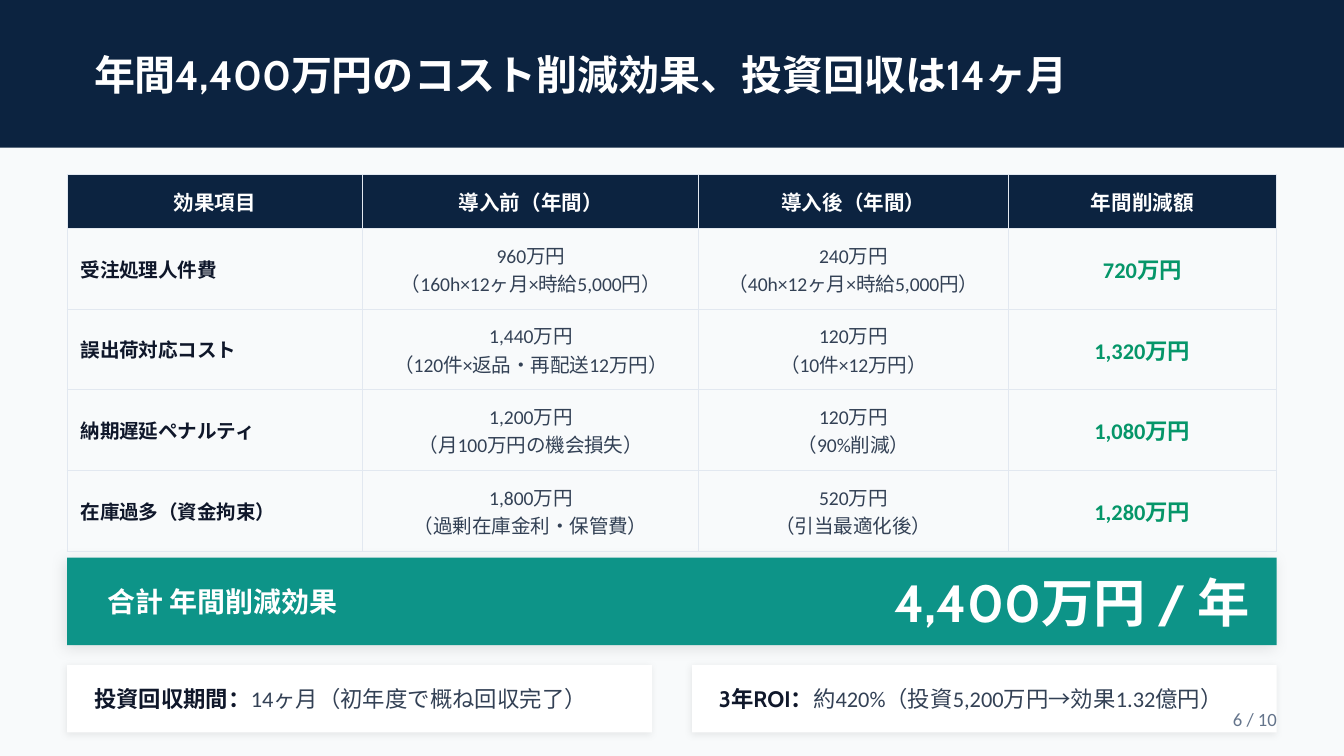
from lxml.etree import SubElement
from pptx import Presentation
from pptx.dml.color import RGBColor
from pptx.enum.shapes import MSO_SHAPE
from pptx.enum.text import MSO_ANCHOR, PP_ALIGN
from pptx.oxml import parse_xml
from pptx.oxml.ns import nsdecls, qn
from pptx.util import Inches, Pt

NAVY = RGBColor(0x0C, 0x23, 0x40)
TEAL = RGBColor(0x0D, 0x94, 0x88)
GREEN = RGBColor(0x05, 0x96, 0x69)
INK = RGBColor(0x0F, 0x17, 0x2A)
SLATE = RGBColor(0x33, 0x41, 0x55)
GRAY = RGBColor(0x64, 0x74, 0x8B)
BORDER = RGBColor(0xE2, 0xE8, 0xF0)
PAPER = RGBColor(0xF8, 0xFA, 0xFB)
WHITE = RGBColor(0xFF, 0xFF, 0xFF)

HEADING, BODY = "Cabin", "Calibri"
LEFT, CENTER, RIGHT = PP_ALIGN.LEFT, PP_ALIGN.CENTER, PP_ALIGN.RIGHT

# The 16:9 slide is a grid of 200 columns; rows are as tall as columns are wide.
COLUMNS = 200
presentation = Presentation()
presentation.slide_width = Inches(10)
presentation.slide_height = presentation.slide_width * 9 // 16
UNIT = presentation.slide_width // COLUMNS
MARGIN = 10
CONTENT = COLUMNS - 2 * MARGIN

slide = presentation.slides.add_slide(presentation.slide_layouts[6])
slide.background.fill.solid()
slide.background.fill.fore_color.rgb = PAPER


def add_panel(box, color, shadow=None):
    """Draw a filled rectangle; shadow is (opacity %, blur pt, distance pt)."""
    panel = slide.shapes.add_shape(MSO_SHAPE.RECTANGLE, *[n * UNIT for n in box])
    panel.shadow.inherit = False
    panel.fill.solid()
    panel.fill.fore_color.rgb = color
    panel.line.fill.background()
    if shadow:
        opacity, blur, distance = shadow
        effects = panel._element.spPr.find(qn("a:effectLst"))
        effects.append(parse_xml(
            f'<a:outerShdw {nsdecls("a")} blurRad="{Pt(blur)}" dist="{Pt(distance)}"'
            f' dir="{135 * 60000}" algn="bl" rotWithShape="0"><a:srgbClr val="000000">'
            f'<a:alpha val="{opacity * 1000}"/></a:srgbClr></a:outerShdw>'))


def write(text_frame, lines, align=LEFT):
    """Fill a frame with lines, each a list of (text, format) runs."""
    for index, line in enumerate(lines):
        paragraph = text_frame.paragraphs[0] if index == 0 else text_frame.add_paragraph()
        paragraph.alignment = align
        for text, style in line:
            run = paragraph.add_run()
            run.text = text
            for name, value in style.items():
                if name == "color":
                    run.font.color.rgb = value
                else:
                    setattr(run.font, name, value)


# Coloured areas
CARD_WIDTH, CARD_STEP = 87, 93
add_panel((0, 0, COLUMNS, 22), NAVY)
add_panel((MARGIN, 83, CONTENT, 13), TEAL, (10, 8, 2))
for card in range(2):
    add_panel((MARGIN + card * CARD_STEP, 99, CARD_WIDTH, 10), WHITE, (8, 4, 1))

# Table of savings
header_style = dict(size=Pt(11), name=HEADING, color=WHITE, bold=True)
item_style = dict(size=Pt(10.5), name=BODY, color=INK, bold=True)
detail_style = dict(size=Pt(10.5), name=BODY, color=SLATE, bold=False)
saving_style = dict(size=Pt(12), name=BODY, color=GREEN, bold=True)
column_styles = [(item_style, LEFT), (detail_style, CENTER),
                 (detail_style, CENTER), (saving_style, CENTER)]

rows = [
    ["効果項目", "導入前（年間）", "導入後（年間）", "年間削減額"],
    ["受注処理人件費", "960万円\n（160h×12ヶ月×時給5,000円）",
     "240万円\n（40h×12ヶ月×時給5,000円）", "720万円"],
    ["誤出荷対応コスト", "1,440万円\n（120件×返品・再配送12万円）",
     "120万円\n（10件×12万円）", "1,320万円"],
    ["納期遅延ペナルティ", "1,200万円\n（月100万円の機会損失）",
     "120万円\n（90%削減）", "1,080万円"],
    ["在庫過多（資金拘束）", "1,800万円\n（過剰在庫金利・保管費）",
     "520万円\n（引当最適化後）", "1,280万円"],
]
column_widths = [44, 50, 46, 40]
row_heights = [8] + [12] * 4
table = slide.shapes.add_table(
    len(rows), len(column_widths), MARGIN * UNIT, 26 * UNIT,
    CONTENT * UNIT, sum(row_heights) * UNIT).table
table.horz_banding = False
for column, width in zip(table.columns, column_widths):
    column.width = width * UNIT
for row, height in zip(table.rows, row_heights):
    row.height = height * UNIT

for row_index, texts in enumerate(rows):
    for column_index, text in enumerate(texts):
        cell = table.cell(row_index, column_index)
        cell.vertical_anchor = MSO_ANCHOR.MIDDLE
        properties = cell._tc.get_or_add_tcPr()
        for side in ("a:lnL", "a:lnR", "a:lnT", "a:lnB"):
            line = SubElement(properties, qn(side), w=str(Pt(0.5)))
            SubElement(SubElement(line, qn("a:solidFill")), qn("a:srgbClr"), val=str(BORDER))
        if row_index == 0:
            cell.fill.solid()
            cell.fill.fore_color.rgb = NAVY
            style, align = header_style, CENTER
        else:
            cell.fill.background()
            style, align = column_styles[column_index]
        write(cell.text_frame, [[(part, style)] for part in text.split("\n")], align)

# Title, total, key figures and page number
title_style = dict(size=Pt(22), name=HEADING, color=WHITE, bold=True)
total_style = title_style | dict(size=Pt(15))
amount_style = title_style | dict(size=Pt(28))
label_style = dict(size=Pt(12), name=HEADING, color=INK, bold=True)
value_style = dict(size=Pt(12), name=BODY, color=SLATE, bold=False)
page_style = dict(size=Pt(10), name=BODY, color=GRAY)
text_boxes = [
    ((14, 3, 172, 16), LEFT,
     [("年間4,400万円のコスト削減効果、投資回収は14ヶ月", title_style)]),
    ((16, 83, 60, 13), LEFT, [("合計 年間削減効果", total_style)]),
    ((110, 83, 76, 13), RIGHT, [("4,400万円 / 年", amount_style)]),
    ((14, 99, 80, 10), LEFT,
     [("投資回収期間：", label_style), ("14ヶ月（初年度で概ね回収完了）", value_style)]),
    ((14 + CARD_STEP, 99, 80, 10), LEFT,
     [("3年ROI：", label_style), ("約420%（投資5,200万円→効果1.32億円）", value_style)]),
    ((170, 104, 20, 6), RIGHT, [("6 / 10", page_style)]),
]
frame_format = dict(word_wrap=True, vertical_anchor=MSO_ANCHOR.MIDDLE, margin_left=0,
                    margin_right=0, margin_top=0, margin_bottom=0)
for box, align, runs in text_boxes:
    text_frame = slide.shapes.add_textbox(*[n * UNIT for n in box]).text_frame
    for name, value in frame_format.items():
        setattr(text_frame, name, value)
    write(text_frame, [runs], align)

presentation.save("out.pptx")
